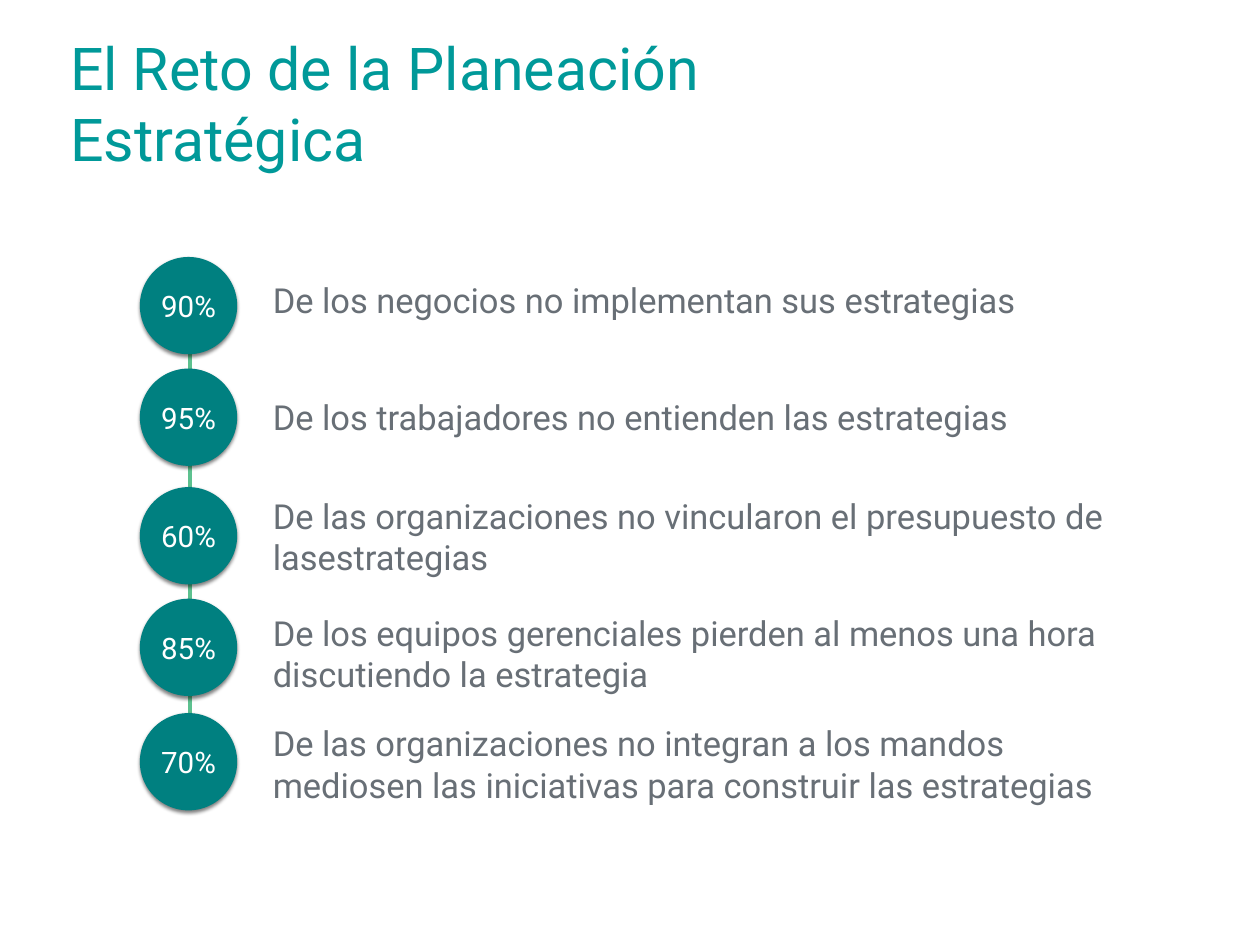
"""Build the slide on the challenge of strategic planning."""
from lxml.etree import SubElement
from pptx import Presentation
from pptx.dml.color import RGBColor
from pptx.enum.shapes import MSO_CONNECTOR, MSO_SHAPE
from pptx.enum.text import MSO_ANCHOR, MSO_AUTO_SIZE, PP_ALIGN
from pptx.oxml.ns import qn
from pptx.util import Cm, Pt

COLORS = {
    "title": "009999",
    "circle": "008080",
    "spine": "5DC18F",
    "body": "686F76",
    "percent": "FFFFFF",
    "shadow": "000000",
}
CIRCLE_LEFT = 4.01
CIRCLE_SIZE = 2.79
STATEMENT_LEFT = 7.67
LINE_HEIGHT = 1.2
FACTS = [
    ("90%", 7.37, "De los negocios no implementan sus estrategias", 7.87, 23.44, 1),
    ("95%", 10.57, "De los trabajadores no entienden las estrategias", 11.23, 24.41, 1),
    ("60%", 13.97, "De las organizaciones no vincularon el presupuesto de "
     "lasestrategias", 14.05, 25.81, 2),
    ("85%", 17.17, "De los equipos gerenciales pierden al menos una hora "
     "discutiendo la estrategia", 17.4, 24.61, 2),
    ("70%", 20.45, "De las organizaciones no integran a los mandos mediosen "
     "las iniciativas para construir las estrategias", 20.57, 24.99, 2),
]


def write(frame, text, *, size, color, font, align=PP_ALIGN.LEFT, inset=0.0, wrap=True):
    frame.word_wrap = wrap
    frame.vertical_anchor = MSO_ANCHOR.MIDDLE
    frame.margin_left = frame.margin_right = Cm(inset)
    frame.margin_top = frame.margin_bottom = Cm(inset)
    paragraph = frame.paragraphs[0]
    paragraph.alignment = align
    run = paragraph.add_run()
    run.text = text
    run.font.name = font
    run.font.size = Pt(size)
    run.font.color.rgb = RGBColor.from_string(COLORS[color])


class PlanningSlide:
    def __init__(self, slide, font="Roboto"):
        self.shapes = slide.shapes
        self.font = font

    def text(self, text, left, top, width, height, **style):
        box = self.shapes.add_textbox(Cm(left), Cm(top), Cm(width), Cm(height))
        write(box.text_frame, text, font=self.font, **style)
        box.text_frame.auto_size = MSO_AUTO_SIZE.SHAPE_TO_FIT_TEXT

    def spine(self, x, top, bottom):
        spine = self.shapes.add_connector(
            MSO_CONNECTOR.STRAIGHT, Cm(x), Cm(top), Cm(x), Cm(bottom))
        spine.line.color.rgb = RGBColor.from_string(COLORS["spine"])
        spine.line.width = Pt(3)
        SubElement(spine._element.spPr, qn("a:effectLst"))

    def circle(self, percent, top):
        circle = self.shapes.add_shape(
            MSO_SHAPE.OVAL, Cm(CIRCLE_LEFT), Cm(top), Cm(CIRCLE_SIZE), Cm(CIRCLE_SIZE))
        circle.fill.solid()
        circle.fill.fore_color.rgb = RGBColor.from_string(COLORS["circle"])
        circle.line.fill.background()
        self.drop_shadow(circle)
        write(circle.text_frame, percent, font=self.font, size=24, color="percent",
              align=PP_ALIGN.CENTER, wrap=False)

    def drop_shadow(self, shape):
        shape.shadow.inherit = False
        effects = shape._element.spPr.find(qn("a:effectLst"))
        shadow = SubElement(effects, qn("a:outerShdw"), blurRad=str(Pt(3)),
                            dist=str(Pt(2)), dir="5400000", rotWithShape="0")
        tint = SubElement(shadow, qn("a:srgbClr"), val=COLORS["shadow"])
        SubElement(tint, qn("a:alpha"), val="50000")


def main():
    deck = Presentation()
    deck.slide_width, deck.slide_height = Cm(36.12), Cm(27.1)
    page = PlanningSlide(deck.slides.add_slide(deck.slide_layouts[6]))

    page.spine(5.44, 9.58, 22.66)
    for percent, circle_top, statement, top, width, lines in FACTS:
        page.circle(percent, circle_top)
        page.text(statement, STATEMENT_LEFT, top, width, 0.27 + LINE_HEIGHT * lines,
                  size=28, color="body", inset=0.15)
    page.text("El Reto de la Planeación Estratégica", 2.01, 0.89, 26.29, 4.11,
              size=48, color="title")
    deck.save("out.pptx")


if __name__ == "__main__":
    main()
